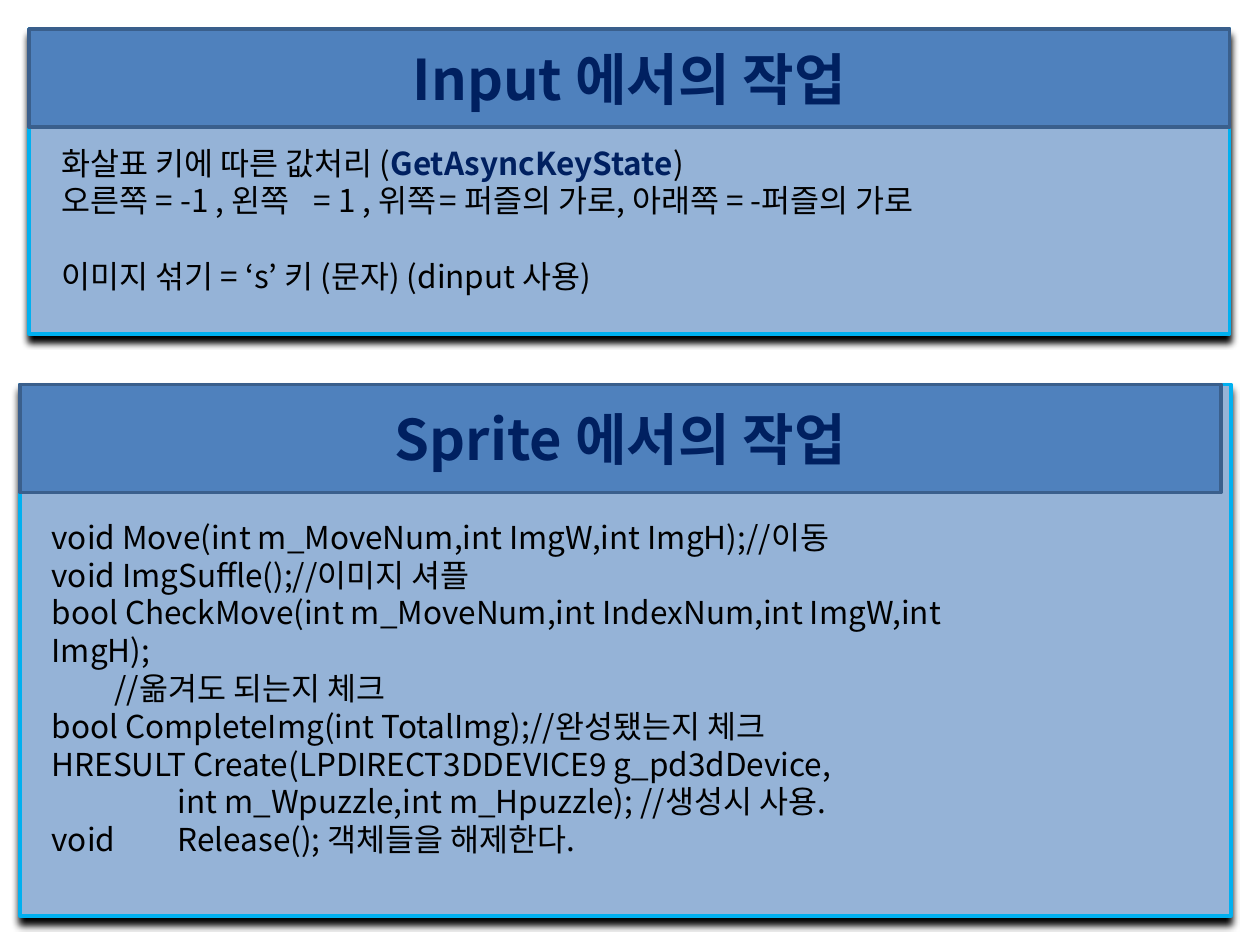
from lxml.etree import SubElement
from pptx import Presentation
from pptx.dml.color import RGBColor
from pptx.enum.shapes import MSO_SHAPE
from pptx.enum.text import MSO_ANCHOR, MSO_AUTO_SIZE, PP_ALIGN
from pptx.oxml.ns import qn
from pptx.util import Inches, Pt

FONT = "Noto Sans CJK KR"
COLORS = {"panel": "95B3D7", "panel_line": "00B0F0", "header": "4F81BD",
          "header_line": "3A5F8C", "accent": "002060", "text": "000000",
          "shadow": "000000"}


def paint(sp, fill, line):
    sp.fill.solid()
    sp.fill.fore_color.rgb = RGBColor.from_string(COLORS[fill])
    sp.line.color.rgb = RGBColor.from_string(COLORS[line])
    sp.line.width = Pt(2)


def add_run(p, text, size, color, bold):
    r = p.add_run()
    r.text = text
    r.font.name = FONT
    r.font.size = Pt(size)
    r.font.bold = bold
    r.font.color.rgb = RGBColor.from_string(COLORS[color])
    SubElement(r.font._element, qn("a:ea"), typeface=FONT)


input_lines = [
    [("화살표 키에 따른 값처리 (", False), ("GetAsyncKeyState", True), (")", False)],
    [("오른쪽 = -1 , 왼쪽\t= 1 , 위쪽\t= 퍼즐의 가로, 아래쪽 = -퍼즐의 가로", False)],
    [("이미지 섞기 = ‘s’ 키 (문자) (dinput 사용)", False)],
]
sprite_lines = [[(text, False)] for text in (
    "void Move(int m_MoveNum,int ImgW,int ImgH);//이동",
    "void ImgSuffle();//이미지 셔플",
    "bool CheckMove(int m_MoveNum,int IndexNum,int ImgW,int ImgH);",
    "\t//옮겨도 되는지 체크",
    "bool CompleteImg(int TotalImg);//완성됐는지 체크",
    "HRESULT Create(LPDIRECT3DDEVICE9 g_pd3dDevice,",
    "\t\tint m_Wpuzzle,int m_Hpuzzle); //생성시 사용.",
    "void\tRelease(); 객체들을 해제한다.",
)]

sections = [
    {"title": "Input 에서의 작업", "lines": input_lines, "holders": (0, 2),
     "panel": (0.23, 0.23, 9.53, 2.42), "header": (0.23, 0.23, 9.53, 0.78),
     "body": (0.39, 1.09, 9.14, 1.62)},
    {"title": "Sprite 에서의 작업", "lines": sprite_lines, "holders": (3, 4),
     "panel": (0.16, 3.05, 9.61, 4.22), "header": (0.16, 3.05, 9.53, 0.86),
     "body": (0.31, 4.06, 8.05, 2.52)},
]

prs = Presentation()
prs.slide_width, prs.slide_height = Inches(10), Inches(7.5)
s = prs.slides.add_slide(prs.slide_layouts[4])
holders = {sp.placeholder_format.idx: sp for sp in s.placeholders}
tree = s.shapes._spTree
tree.remove(holders[1]._element)

for section in sections:
    panel = s.shapes.add_shape(MSO_SHAPE.RECTANGLE, *map(Inches, section["panel"]))
    paint(panel, "panel", "panel_line")
    effects = SubElement(panel._element.spPr, qn("a:effectLst"))
    shadow = SubElement(effects, qn("a:outerShdw"), blurRad=str(Pt(4)),
                        dist=str(Pt(4)), dir="5400000", algn="t", rotWithShape="0")
    SubElement(shadow, qn("a:srgbClr"), val=COLORS["shadow"])

    header, body = (holders[idx] for idx in section["holders"])
    for sp, key in ((header, "header"), (body, "body")):
        tree.append(sp._element)
        sp.left, sp.top, sp.width, sp.height = map(Inches, section[key])
        sp.text_frame.word_wrap = True
        sp.text_frame.auto_size = MSO_AUTO_SIZE.NONE

    paint(header, "header", "header_line")
    header.text_frame.vertical_anchor = MSO_ANCHOR.MIDDLE
    p = header.text_frame.paragraphs[0]
    p.alignment = PP_ALIGN.CENTER
    p.space_before = Pt(0)
    add_run(p, section["title"], 32, "accent", True)

    tf = body.text_frame
    tf.vertical_anchor = MSO_ANCHOR.TOP
    for i, line in enumerate(section["lines"]):
        p = tf.paragraphs[0] if i == 0 else tf.add_paragraph()
        p.space_before = Pt(0)
        pPr = p._p.get_or_add_pPr()
        pPr.set("marL", "0")
        pPr.set("indent", "0")
        SubElement(pPr, qn("a:buNone"))
        for text, bold in line:
            add_run(p, text, 18, "accent" if bold else "text", bold)

input_paragraphs = holders[2].text_frame.paragraphs
input_paragraphs[2].space_before = Pt(21.5)
tabs = SubElement(input_paragraphs[1]._p.pPr, qn("a:tabLst"))
for stop in (2.29, 3.71):
    SubElement(tabs, qn("a:tab"), pos=str(Inches(stop)), algn="l")

prs.save("out.pptx")
